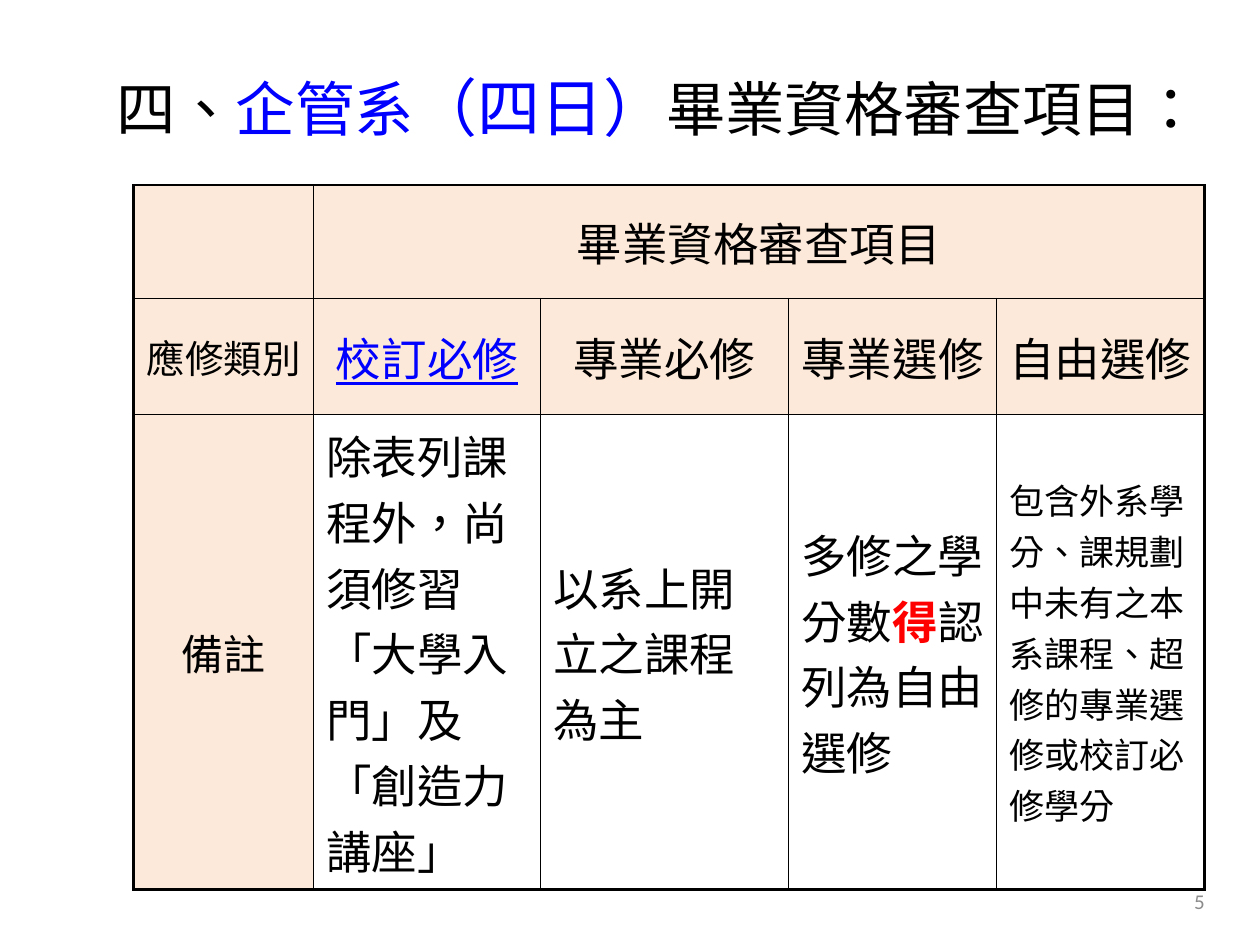
from dataclasses import dataclass

from lxml import etree
from pptx import Presentation
from pptx.dml.color import RGBColor
from pptx.enum.text import MSO_ANCHOR, PP_ALIGN
from pptx.oxml.ns import qn
from pptx.util import Inches, Pt

MIDDLE = MSO_ANCHOR.MIDDLE
LEFT, CENTER, RIGHT = PP_ALIGN.LEFT, PP_ALIGN.CENTER, PP_ALIGN.RIGHT


@dataclass(frozen=True)
class Theme:
    ink: str = "000000"
    accent: str = "0000FF"
    alert: str = "FF0000"
    muted: str = "8C8C8C"
    header_fill: str = "FDE9D9"
    latin_font: str = "Times New Roman"
    chinese_font: str = "Noto Sans CJK JP"
    note_font: str = "Noto Sans CJK SC"
    number_font: str = "Calibri"
    title_size: int = 34
    bracket_size: int = 36
    body_size: int = 26
    label_size: int = 24
    category_size: int = 22
    note_size: int = 20
    number_size: int = 12
    outer_line: float = 1.5
    inner_line: float = 1


class SlideBuilder:
    def __init__(self, page, theme):
        self.page = page
        self.theme = theme

    def span(self, para, text, size=None, color=None, font=None,
             bold=False, underline=False):
        theme = self.theme
        span = para.add_run()
        span.text = text
        span.font.size = Pt(size or theme.body_size)
        span.font.name = font or theme.latin_font
        span.font.bold = bold
        span.font.underline = underline
        span.font.color.rgb = RGBColor.from_string(color or theme.ink)
        properties = span._r.get_or_add_rPr()
        properties.set("lang", "zh-TW")
        east = etree.SubElement(properties, qn("a:ea"))
        east.set("typeface", font or theme.chinese_font)

    def text(self, left, top, width, height, spans, align=LEFT):
        box = self.page.shapes.add_textbox(
            Inches(left), Inches(top), Inches(width), Inches(height))
        frame = box.text_frame
        frame.word_wrap = True
        frame.vertical_anchor = MIDDLE
        para = frame.paragraphs[0]
        para.alignment = align
        for text, style in spans:
            self.span(para, text, **style)

    def border(self, cell, side, width):
        properties = cell._tc.get_or_add_tcPr()
        line = etree.SubElement(properties, qn(f"a:ln{side}"), w=str(Pt(width)))
        fill = etree.SubElement(line, qn("a:solidFill"))
        etree.SubElement(fill, qn("a:srgbClr"), val=self.theme.ink)

    def cell(self, cell, spans, header, align, outer_sides):
        theme = self.theme
        cell.vertical_anchor = MIDDLE
        for side in "LRTB":
            outer = side in outer_sides
            self.border(cell, side, theme.outer_line if outer else theme.inner_line)
        if header:
            cell.fill.solid()
            cell.fill.fore_color.rgb = RGBColor.from_string(theme.header_fill)
        else:
            cell.fill.background()
        para = cell.text_frame.paragraphs[0]
        para.alignment = align
        for text, style in spans:
            self.span(para, text, **style)

    def table(self, left, top, widths, heights, rows):
        table = self.page.shapes.add_table(
            len(heights), len(widths), Inches(left), Inches(top),
            Inches(sum(widths)), Inches(sum(heights))).table
        table.first_row = False
        table.horz_banding = False
        for column, width in zip(table.columns, widths):
            column.width = Inches(width)
        for row, height in zip(table.rows, heights):
            row.height = Inches(height)
        last_row, last_column = len(heights) - 1, len(widths) - 1
        table.cell(0, 1).merge(table.cell(0, last_column))
        for r, row in enumerate(rows):
            for c, spans in enumerate(row):
                cell = table.cell(r, c)
                edges = {"L": c == 0, "T": r == 0, "B": r == last_row,
                         "R": c + cell.span_width > last_column}
                header = r < last_row or c == 0
                self.cell(cell, spans, header, CENTER if header else LEFT,
                          [side for side, outer in edges.items() if outer])


def main():
    theme = Theme()
    deck = Presentation()
    deck.slide_width, deck.slide_height = Inches(10), Inches(7.5)
    builder = SlideBuilder(deck.slides.add_slide(deck.slide_layouts[6]), theme)

    builder.text(7.33, 6.95, 2.33, 0.4, [
        ("5", {"size": theme.number_size, "color": theme.muted,
               "font": theme.number_font})], RIGHT)

    rows = [
        [[], [("畢業資格審查項目", {})], [], [], []],
        [
            [("應修類別", {"size": theme.category_size})],
            [("校訂必修", {"color": theme.accent, "underline": True})],
            [("專業必修", {})],
            [("專業選修", {})],
            [("自由選修", {})],
        ],
        [
            [("備註", {"size": theme.label_size})],
            [("除表列課程外，尚須修習「大學入門」及「創造力講座」", {})],
            [("以系上開立之課程為主", {})],
            [("多修之學分數", {}),
             ("得", {"color": theme.alert, "bold": True}),
             ("認列為自由選修", {})],
            [("包含外系學分、課規劃中未有之本系課程、超修的專業選修或校訂必修學分",
              {"size": theme.note_size, "font": theme.note_font})],
        ],
    ]
    builder.table(1.06, 1.47, [1.43, 1.8, 1.97, 1.65, 1.65],
                  [0.9, 0.92, 3.77], rows)

    title = {"size": theme.title_size, "font": theme.chinese_font}
    accent = {**title, "color": theme.accent}
    builder.text(0.83, 0.3, 8.83, 1.09, [
        ("四、", title),
        ("企管系", accent),
        ("（四日）", {**accent, "size": theme.bracket_size}),
        ("畢業資格審查項目：", title)])

    deck.save("out.pptx")


if __name__ == "__main__":
    main()
